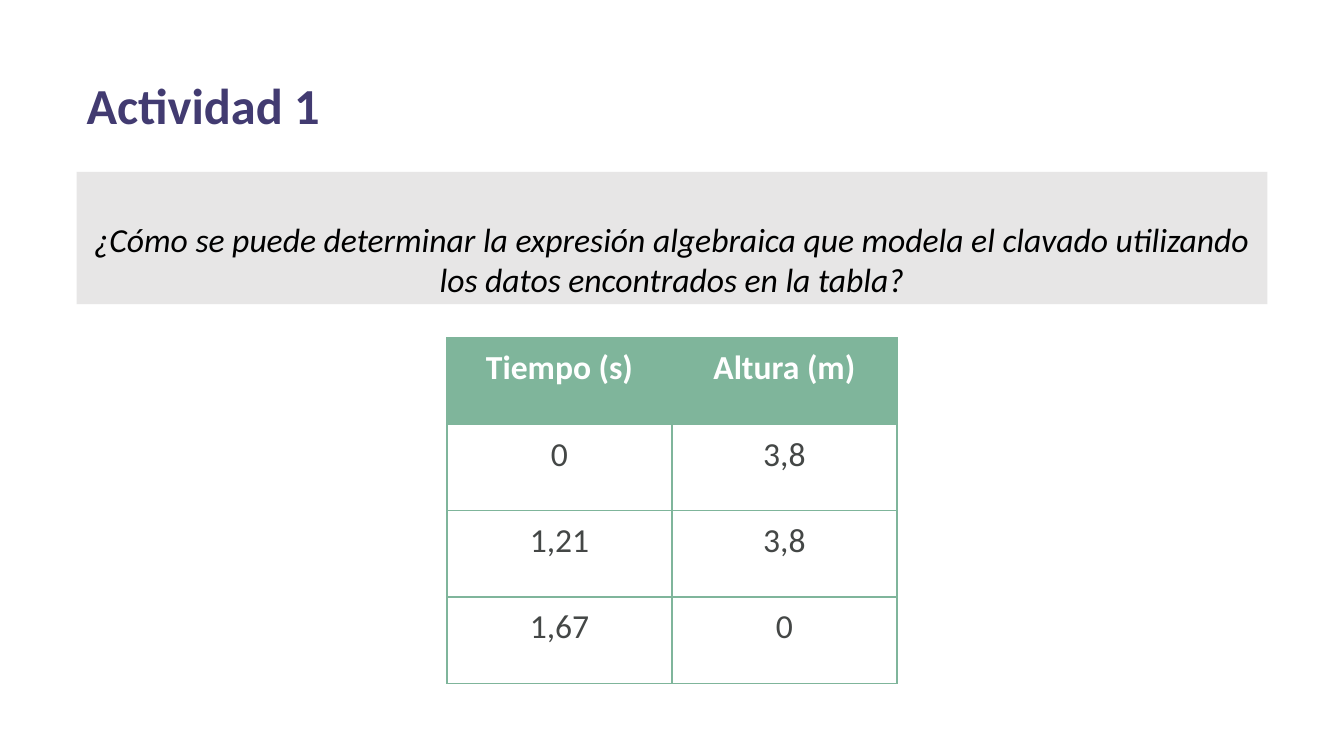
from dataclasses import dataclass

from lxml import etree
from pptx import Presentation
from pptx.dml.color import RGBColor
from pptx.enum.shapes import MSO_SHAPE
from pptx.enum.text import MSO_ANCHOR, MSO_AUTO_SIZE, PP_ALIGN
from pptx.oxml.ns import qn
from pptx.util import Pt

LEFT, CENTER = PP_ALIGN.LEFT, PP_ALIGN.CENTER
TOP, BOTTOM = MSO_ANCHOR.TOP, MSO_ANCHOR.BOTTOM
RECTANGLE = MSO_SHAPE.RECTANGLE
NO_AUTOFIT = MSO_AUTO_SIZE.NONE
TITLE_ONLY = 5

PURPLE, GRAY, GREEN = "423B71", "E7E6E6", "7FB59B"
BLACK, WHITE, DARK_GRAY = "000000", "FFFFFF", "444746"

MARGIN_X = 41
TABLE_LEFT, TABLE_TOP = 239.5, 181
COLUMN_WIDTH, ROW_HEIGHT = 120.5, 46.3
CELL_INSET = 5.25
BORDER_WIDTH = 1


@dataclass
class TextStyle:
    size: float
    color: str
    bold: bool = False
    italic: bool = False
    align: PP_ALIGN = CENTER


@dataclass
class Measurement:
    time: str
    height: str


TITLE_STYLE = TextStyle(27, PURPLE, bold=True, align=LEFT)
QUESTION_STYLE = TextStyle(18, BLACK, italic=True)
HEADER_STYLE = TextStyle(18, WHITE, bold=True)
VALUE_STYLE = TextStyle(18, DARK_GRAY)

QUESTION = (
    "¿Cómo se puede determinar la expresión algebraica que modela el clavado "
    "utilizando los datos encontrados en la tabla?"
)
HEADER = Measurement("Tiempo (s)", "Altura (m)")
MEASUREMENTS = [
    Measurement("0", "3,8"),
    Measurement("1,21", "3,8"),
    Measurement("1,67", "0"),
]


def rgb(color: str) -> RGBColor:
    return RGBColor.from_string(color)


def write_text(frame, text: str, style: TextStyle) -> None:
    frame.text = text
    para = frame.paragraphs[0]
    para.alignment = style.align
    font = para.font
    font.name = "Calibri"
    font.size = Pt(style.size)
    font.bold = style.bold
    font.italic = style.italic
    font.color.rgb = rgb(style.color)


def format_frame(frame, anchor: MSO_ANCHOR) -> None:
    frame.word_wrap = True
    frame.auto_size = NO_AUTOFIT
    frame.vertical_anchor = anchor
    frame.margin_left = frame.margin_right = Pt(5.4)
    frame.margin_top = frame.margin_bottom = Pt(2.7)


def add_title(page) -> None:
    title = page.shapes.title
    title.left, title.top = Pt(MARGIN_X), Pt(37)
    title.width, title.height = Pt(482), Pt(38)
    format_frame(title.text_frame, TOP)
    write_text(title.text_frame, "Actividad 1", TITLE_STYLE)


def add_question(page) -> None:
    box = page.shapes.add_shape(
        RECTANGLE, Pt(MARGIN_X), Pt(92), Pt(720 - 2 * MARGIN_X), Pt(71)
    )
    box.shadow.inherit = False
    box.fill.solid()
    box.fill.fore_color.rgb = rgb(GRAY)
    box.line.fill.background()
    format_frame(box.text_frame, BOTTOM)
    write_text(box.text_frame, QUESTION, QUESTION_STYLE)


def add_borders(cell, color: str) -> None:
    properties = cell._tc.get_or_add_tcPr()
    for side in ("lnL", "lnR", "lnT", "lnB"):
        line = etree.SubElement(properties, qn(f"a:{side}"), w=str(Pt(BORDER_WIDTH)))
        fill = etree.SubElement(line, qn("a:solidFill"))
        etree.SubElement(fill, qn("a:srgbClr"), val=color)


def format_cell(cell, text: str, style: TextStyle, fill: str) -> None:
    cell.margin_left = cell.margin_right = Pt(CELL_INSET)
    cell.margin_top = cell.margin_bottom = Pt(CELL_INSET)
    cell.vertical_anchor = TOP
    add_borders(cell, GREEN)
    cell.fill.solid()
    cell.fill.fore_color.rgb = rgb(fill)
    write_text(cell.text_frame, text, style)


def add_measurement_table(page) -> None:
    rows = [HEADER, *MEASUREMENTS]
    table = page.shapes.add_table(
        len(rows), 2, Pt(TABLE_LEFT), Pt(TABLE_TOP),
        Pt(2 * COLUMN_WIDTH), Pt(len(rows) * ROW_HEIGHT),
    ).table
    table.horz_banding = False
    for column in table.columns:
        column.width = Pt(COLUMN_WIDTH)
    for row, measurement in zip(table.rows, rows):
        row.height = Pt(ROW_HEIGHT)
        is_header = measurement is HEADER
        style = HEADER_STYLE if is_header else VALUE_STYLE
        fill = GREEN if is_header else WHITE
        for cell, text in zip(row.cells, (measurement.time, measurement.height)):
            format_cell(cell, text, style, fill)


def main() -> None:
    deck = Presentation()
    deck.slide_width, deck.slide_height = Pt(720), Pt(405)
    page = deck.slides.add_slide(deck.slide_layouts[TITLE_ONLY])
    add_title(page)
    add_question(page)
    add_measurement_table(page)
    deck.save("out.pptx")


if __name__ == "__main__":
    main()
